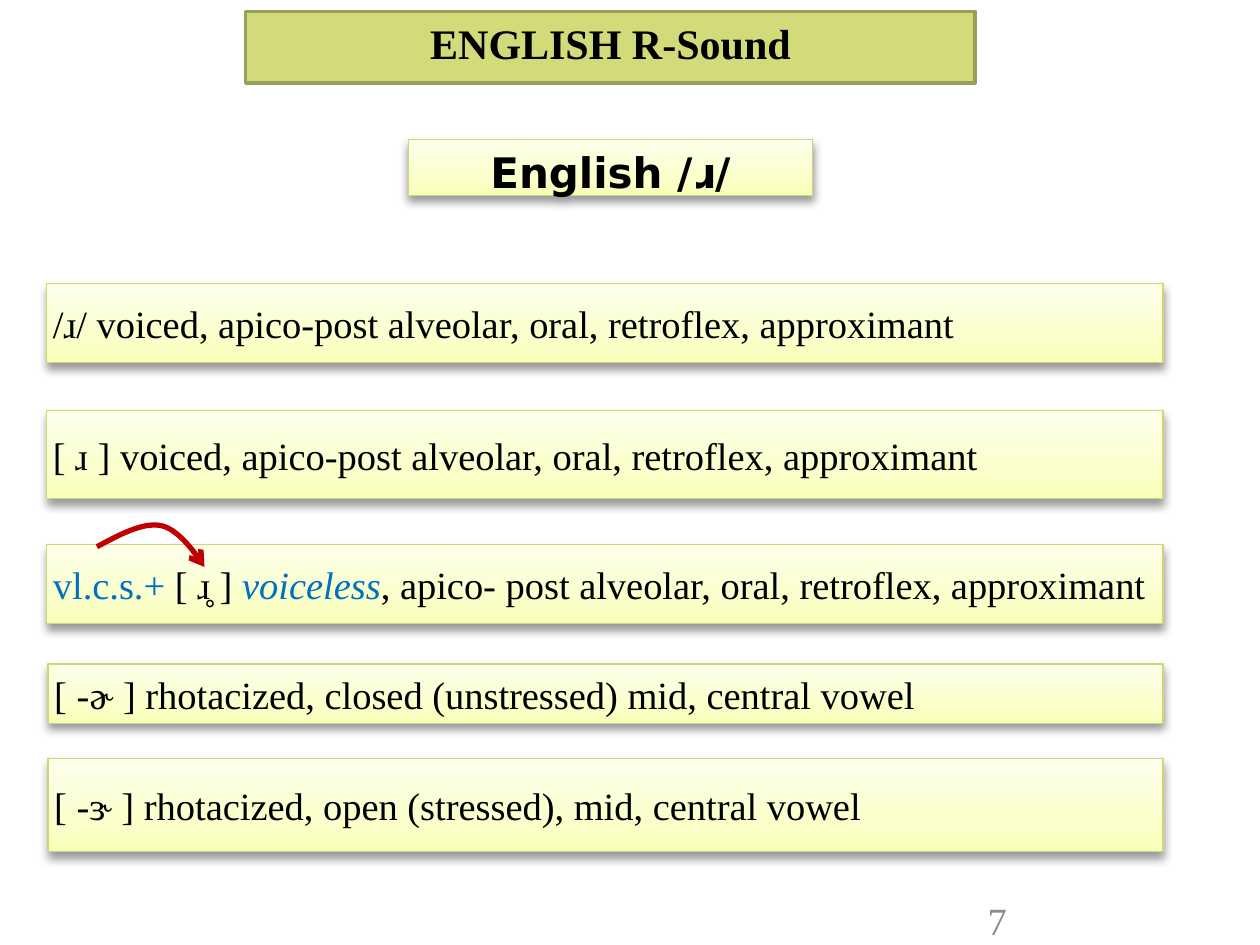
from copy import deepcopy

from lxml.etree import SubElement
from pptx import Presentation
from pptx.dml.color import RGBColor
from pptx.enum.shapes import MSO_SHAPE
from pptx.enum.text import MSO_ANCHOR, PP_ALIGN
from pptx.oxml.ns import qn
from pptx.util import Inches, Pt

COLORS = {
    "title": "D2DA7A", "title_line": "999F59", "card_line": "CFD775",
    "text": "000000", "accent": "0070C0", "number": "8C8C8C",
    "arrow": "C00000", "shadow": "000000",
}
CARD_STOPS = [(0, "F8FFB8"), (0.35, "FAFFCC"), (1, "FDFFEB")]
SERIF, SANS = "Times New Roman", "DejaVu Sans"
UNIT = Inches(0.1)
ROW_RIGHT = 92.3
ROWS = [
    (3.7, 22.5, 6.3, [("/ɹ/ voiced, apico-post alveolar, oral, retroflex, approximant", {})]),
    (3.7, 32.6, 7, [("[ ɹ ] voiced, apico-post alveolar, oral, retroflex, approximant", {})]),
    (3.7, 43.2, 6.3, [
        ("vl.c.s.+ ", {"color": "accent"}),
        ("[ ɹ̥ ] ", {}),
        ("voiceless", {"color": "accent", "italic": True}),
        (", apico- post alveolar, oral, retroflex, approximant", {}),
    ]),
    (3.8, 52.7, 4.7, [("[ -ɚ ] rhotacized, closed (unstressed) mid, central vowel", {})]),
    (3.8, 60.2, 7.4, [("[ -ɝ ] rhotacized, open (stressed), mid, central vowel", {})]),
]


def rgb(name):
    """Return the palette colour of that name."""
    return RGBColor.from_string(COLORS[name])


def emu(box):
    """Turn a box in grid units into whole EMU."""
    return [round(v * UNIT) for v in box]


def write(sp, runs, anchor, align=PP_ALIGN.LEFT, inset=0.5, before=10, **base):
    """Fill a shape with one paragraph of formatted runs."""
    tf = sp.text_frame
    frame = {"word_wrap": True, "vertical_anchor": anchor}
    if inset is not None:
        margins = ("margin_left", "margin_top", "margin_right", "margin_bottom")
        frame.update(dict.fromkeys(margins, round(inset * UNIT)))
    for key, value in frame.items():
        setattr(tf, key, value)
    p = tf.paragraphs[0]
    p.alignment, p.space_before = align, Pt(before)
    for text, changes in runs:
        fmt = {"name": SERIF, "size": Pt(22), "color": "text", **base, **changes}
        r = p.add_run()
        r.text = text
        r.font.color.rgb = rgb(fmt.pop("color"))
        for key, value in fmt.items():
            setattr(r.font, key, value)


def add_box(s, box, line, width):
    """Add an outlined rectangle without a shadow."""
    sp = s.shapes.add_shape(MSO_SHAPE.RECTANGLE, *emu(box))
    sp.shadow.inherit = False
    sp.line.color.rgb = rgb(line)
    sp.line.width = Pt(width)
    return sp


def add_card(s, box):
    """Add a rectangle with a vertical gradient and a soft shadow."""
    sp = add_box(s, box, "card_line", 0.75)
    sp.fill.gradient()
    sp.fill.gradient_angle = 90
    spPr = sp._element.spPr
    first = spPr.find(".//" + qn("a:gs"))
    first.addnext(deepcopy(first))
    for stop, (position, color) in zip(sp.fill.gradient_stops, CARD_STOPS):
        stop.position = position
        stop.color.rgb = RGBColor.from_string(color)
    shadow = SubElement(
        spPr.find(qn("a:effectLst")), qn("a:outerShdw"),
        blurRad=str(Pt(5)), dist=str(Pt(3)), dir="5400000", rotWithShape="0")
    tint = SubElement(shadow, qn("a:srgbClr"), val=COLORS["shadow"])
    SubElement(tint, qn("a:alpha"), val="40000")
    return sp


def add_title(s, box):
    """Place the title bar."""
    sp = add_box(s, box, "title_line", 2)
    sp.fill.solid()
    sp.fill.fore_color.rgb = rgb("title")
    write(sp, [("ENGLISH R-Sound", {})], MSO_ANCHOR.TOP, PP_ALIGN.CENTER,
          size=Pt(24), bold=True)


def add_heading(s, box):
    """Place the phoneme heading."""
    write(add_card(s, box), [("English /ɹ/", {})], MSO_ANCHOR.TOP, PP_ALIGN.CENTER,
          name=SANS, size=Pt(24), bold=True)


def add_allophone(s, box, runs):
    """Place one row describing a sound."""
    write(add_card(s, box), runs, MSO_ANCHOR.MIDDLE)


def add_number(s, box):
    """Place the slide number."""
    write(s.shapes.add_textbox(*emu(box)), [("7", {})], MSO_ANCHOR.MIDDLE,
          inset=None, before=0, color="number")


def bezier(points, steps=16):
    """Return points along a cubic curve, leaving out its start."""
    def at(t):
        weights = ((1 - t) ** 3, 3 * t * (1 - t) ** 2, 3 * t * t * (1 - t), t ** 3)
        return tuple(sum(w * pt[i] for w, pt in zip(weights, points)) for i in (0, 1))
    return [at(n / steps) for n in range(1, steps + 1)]


def add_arrow(s, box):
    """Draw the curved arrow from the consonant to the devoiced sound."""
    x, y, w, h = emu(box)
    start, crest, fall, tip = (0, 0.5), (0.57, 0), (0.95, 0.85), (0.98, 0.97)
    shares = [start, *bezier([start, (0.21, 0.21), (0.41, -0.06), crest]),
              *bezier([crest, (0.74, 0.06), (0.9, 0.68), fall]), tip]
    points = [(round(x + px * w), round(y + py * h)) for px, py in shares]
    builder = s.shapes.build_freeform(*points[0])
    builder.add_line_segments(points[1:], close=False)
    sp = builder.convert_to_shape()
    sp.shadow.inherit = False
    sp.fill.background()
    sp.line.color.rgb = rgb("arrow")
    sp.line.width = Pt(3)
    SubElement(sp._element.spPr.find(qn("a:ln")), qn("a:tailEnd"), type="arrow")


def main():
    """Build the slide and save it."""
    prs = Presentation()
    prs.slide_width, prs.slide_height = 100 * UNIT, 75 * UNIT
    s = prs.slides.add_slide(prs.slide_layouts[6])
    add_title(s, (19.5, 0.9, 57.9, 5.7))
    add_heading(s, (32.4, 11.1, 32.1, 4.4))
    for left, top, height, runs in ROWS:
        add_allophone(s, (left, top, ROW_RIGHT - left, height), runs)
    add_number(s, (77.4, 71, 22.5, 4))
    add_arrow(s, (7.7, 41.7, 8.7, 3.4))
    prs.save("out.pptx")


if __name__ == "__main__":
    main()
